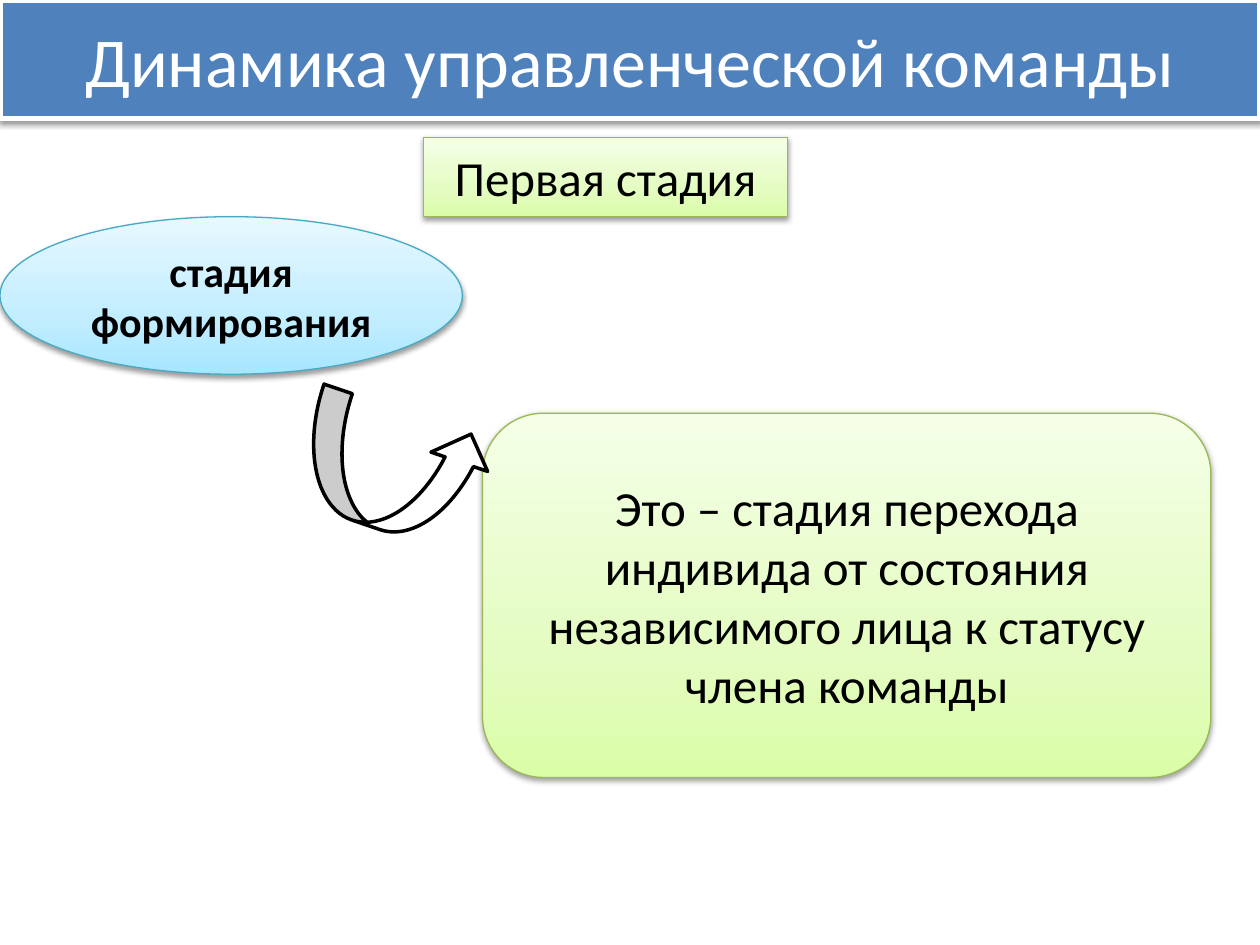
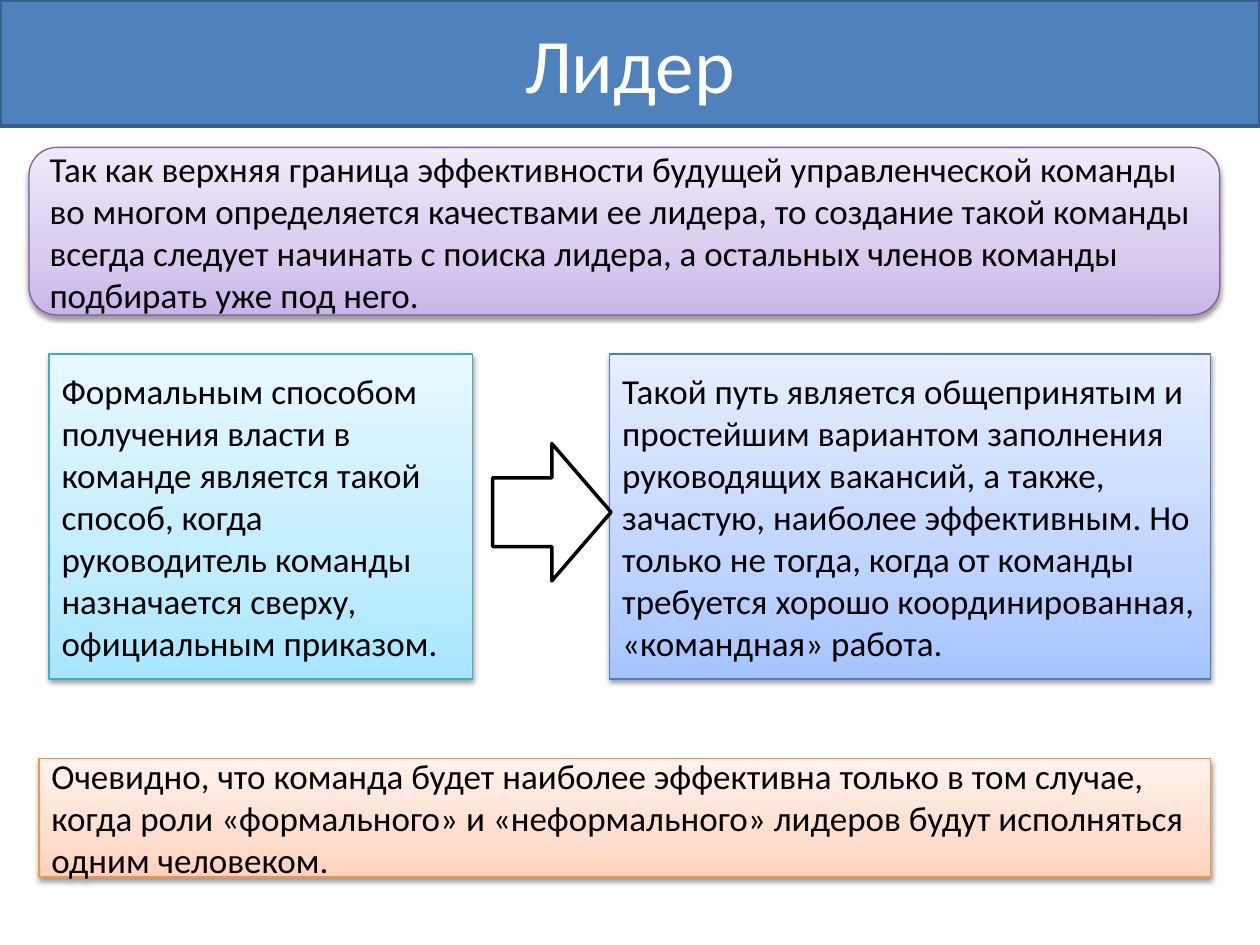
"""Build two slides on how a management team forms and who leads it."""
from copy import deepcopy

from lxml.etree import SubElement
from pptx import Presentation
from pptx.dml.color import RGBColor
from pptx.enum.shapes import MSO_SHAPE as Shape
from pptx.enum.text import MSO_ANCHOR as Anchor, PP_ALIGN as Align
from pptx.oxml.ns import qn
from pptx.util import Inches, Pt

SLIDE_WIDTH, SLIDE_HEIGHT = 10, 7.5
FONT = "Calibri"
BLACK = RGBColor(0x00, 0x00, 0x00)
WHITE = RGBColor(0xFF, 0xFF, 0xFF)
BAND_BLUE = RGBColor(0x4F, 0x81, 0xBD)
BAND_EDGE = RGBColor(0x3A, 0x5F, 0x8C)

STOPS = (0, 0.35, 1)
GREEN = ([RGBColor(0xDA, 0xFD, 0xA7), RGBColor(0xE4, 0xFC, 0xC2), RGBColor(0xF5, 0xFF, 0xE7)],
         RGBColor(0x98, 0xB9, 0x55))
AQUA = ([RGBColor(0xA7, 0xE6, 0xFF), RGBColor(0xC1, 0xED, 0xFF), RGBColor(0xE7, 0xF8, 0xFF)],
        RGBColor(0x46, 0xAA, 0xC5))
PURPLE = ([RGBColor(0xC9, 0xB5, 0xE8), RGBColor(0xD8, 0xCB, 0xEE), RGBColor(0xF0, 0xEA, 0xF9)],
          RGBColor(0x7D, 0x60, 0xA0))
BLUE = ([RGBColor(0xA4, 0xC4, 0xFF), RGBColor(0xBF, 0xD4, 0xFF), RGBColor(0xE6, 0xEE, 0xFF)],
        RGBColor(0x4B, 0x7E, 0xBC))
ORANGE = ([RGBColor(0xFF, 0xD2, 0xBD), RGBColor(0xFF, 0xDE, 0xD0), RGBColor(0xFF, 0xF2, 0xED)],
          RGBColor(0xF6, 0x92, 0x40))

STAGE_NAME = {"size": Pt(24), "bold": True}
STAGE_TEXT = {"size": Pt(28)}
LEADER_TEXT = {"size": Pt(20)}

SLIDES = [
    {
        "title": "Динамика управленческой команды",
        "band": {"height": 0.94, "edge": WHITE, "weight": 3, "size": 40, "shadow": True},
        "cards": [
            (Shape.OVAL, (0, 1.72, 3.67, 1.25), AQUA, Align.CENTER, STAGE_NAME,
             "стадия формирования"),
            (Shape.ROUNDED_RECTANGLE, (3.83, 3.28, 5.78, 2.89), GREEN, Align.CENTER, STAGE_TEXT,
             "Это – стадия перехода индивида от состояния независимого лица "
             "к статусу члена команды"),
            (Shape.RECTANGLE, (3.36, 1.09, 2.89, 0.63), GREEN, Align.CENTER, STAGE_TEXT,
             "Первая стадия"),
        ],
        "arrow": (Shape.CURVED_RIGHT_ARROW, (2.64, 3, 0.95, 1.47), 288.8),
    },
    {
        "title": "Лидер",
        "band": {"height": 1, "edge": BAND_EDGE, "weight": 2, "size": 44, "shadow": False},
        "cards": [
            (Shape.ROUNDED_RECTANGLE, (0.23, 1.17, 9.45, 1.33), PURPLE, Align.LEFT, LEADER_TEXT,
             "Так как верхняя граница эффективности будущей управленческой команды во многом "
             "определяется качествами ее лидера, то создание такой команды всегда следует "
             "начинать с поиска лидера, а остальных членов команды подбирать уже под него."),
            (Shape.RECTANGLE, (0.39, 2.81, 3.36, 2.58), AQUA, Align.LEFT, LEADER_TEXT,
             "Формальным способом получения власти в команде является такой способ, когда "
             "руководитель команды назначается сверху, официальным приказом."),
            (Shape.RECTANGLE, (4.84, 2.81, 4.77, 2.58), BLUE, Align.LEFT, LEADER_TEXT,
             "Такой путь является общепринятым и простейшим вариантом заполнения руководящих "
             "вакансий, а также, зачастую, наиболее эффективным. Но только не тогда, когда от "
             "команды требуется хорошо координированная, «командная» работа."),
            (Shape.RECTANGLE, (0.31, 6.02, 9.3, 0.94), ORANGE, Align.LEFT, LEADER_TEXT,
             "Очевидно, что команда будет наиболее эффективна только в том случае, когда роли "
             "«формального» и «неформального» лидеров будут исполняться одним человеком."),
        ],
        "arrow": (Shape.RIGHT_ARROW, (3.91, 3.52, 0.94, 1.09), 0),
    },
]


def add_outlined(slide, preset, place, edge, weight):
    shape = slide.shapes.add_shape(preset, *map(Inches, place))
    shape.shadow.inherit = False
    shape.line.color.rgb = edge
    shape.line.width = Pt(weight)
    return shape


def fill_solid(shape, color):
    shape.fill.solid()
    shape.fill.fore_color.rgb = color


def fill_gradient(shape, colors):
    shape.fill.gradient()
    shape.fill.gradient_angle = 90
    first_stop = next(shape._element.spPr.iter(qn("a:gs")))
    first_stop.addnext(deepcopy(first_stop))
    for stop, position, color in zip(shape.fill.gradient_stops, STOPS, colors):
        stop.position = position
        stop.color.rgb = color


def drop_shadow(shape):
    effects = shape._element.spPr.find(qn("a:effectLst"))
    shadow = SubElement(effects, qn("a:outerShdw"), blurRad=str(Pt(3.1)), dist=str(Pt(1.6)),
                        dir="5400000", rotWithShape="0")
    tone = SubElement(shadow, qn("a:srgbClr"), val=str(BLACK))
    SubElement(tone, qn("a:alpha"), val="38000")


def write(shape, text, align, color, style):
    frame = shape.text_frame
    frame.word_wrap = True
    frame.vertical_anchor = Anchor.MIDDLE
    paragraph = frame.paragraphs[0]
    paragraph.alignment = align
    run = paragraph.add_run()
    run.text = text
    run.font.color.rgb = color
    for attribute, value in {"name": FONT, **style}.items():
        setattr(run.font, attribute, value)


def add_band(slide, title, band):
    shape = add_outlined(slide, Shape.RECTANGLE, (0, 0, SLIDE_WIDTH, band["height"]),
                         band["edge"], band["weight"])
    fill_solid(shape, BAND_BLUE)
    if band["shadow"]:
        drop_shadow(shape)
    write(shape, title, Align.CENTER, WHITE, {"size": Pt(band["size"])})


def add_card(slide, preset, place, palette, align, style, text):
    colors, edge = palette
    shape = add_outlined(slide, preset, place, edge, 0.75)
    fill_gradient(shape, colors)
    drop_shadow(shape)
    write(shape, text, align, BLACK, style)


def add_arrow(slide, preset, place, rotation):
    shape = add_outlined(slide, preset, place, BLACK, 2)
    fill_solid(shape, WHITE)
    shape.rotation = rotation


def main():
    deck = Presentation()
    deck.slide_width, deck.slide_height = Inches(SLIDE_WIDTH), Inches(SLIDE_HEIGHT)
    for content in SLIDES:
        slide = deck.slides.add_slide(deck.slide_layouts[6])
        add_band(slide, content["title"], content["band"])
        for card in content["cards"]:
            add_card(slide, *card)
        add_arrow(slide, *content["arrow"])
    deck.save("out.pptx")


if __name__ == "__main__":
    main()
